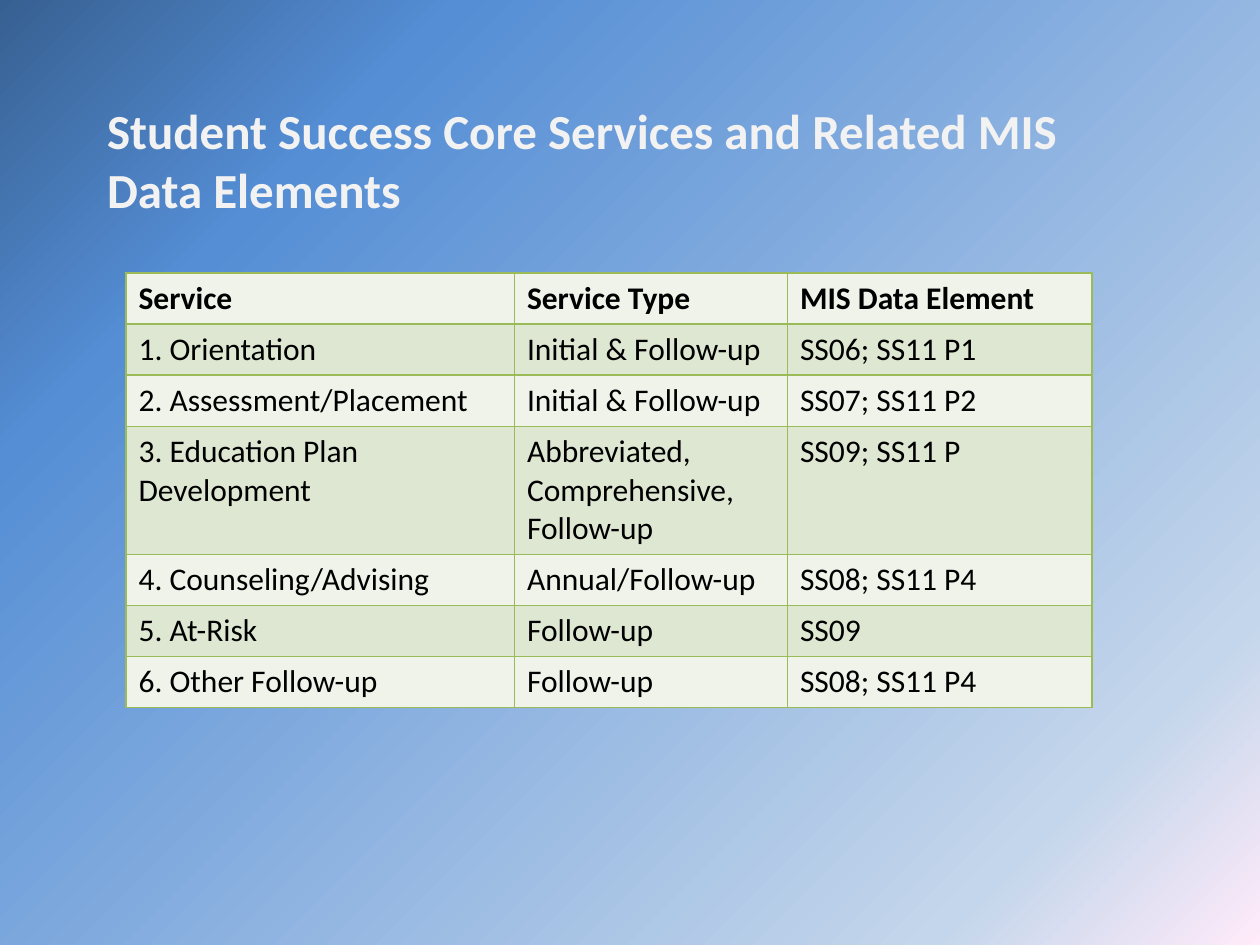
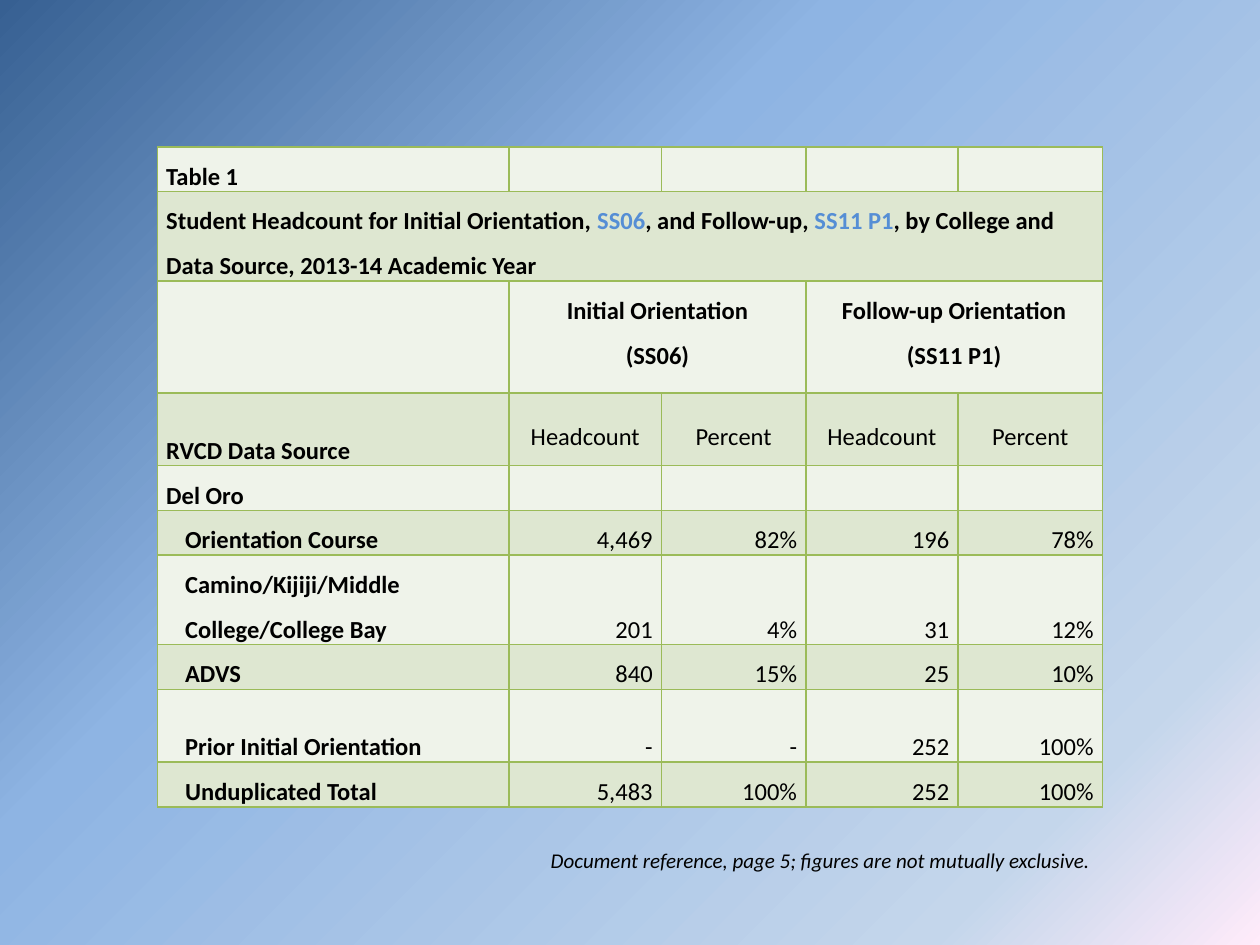
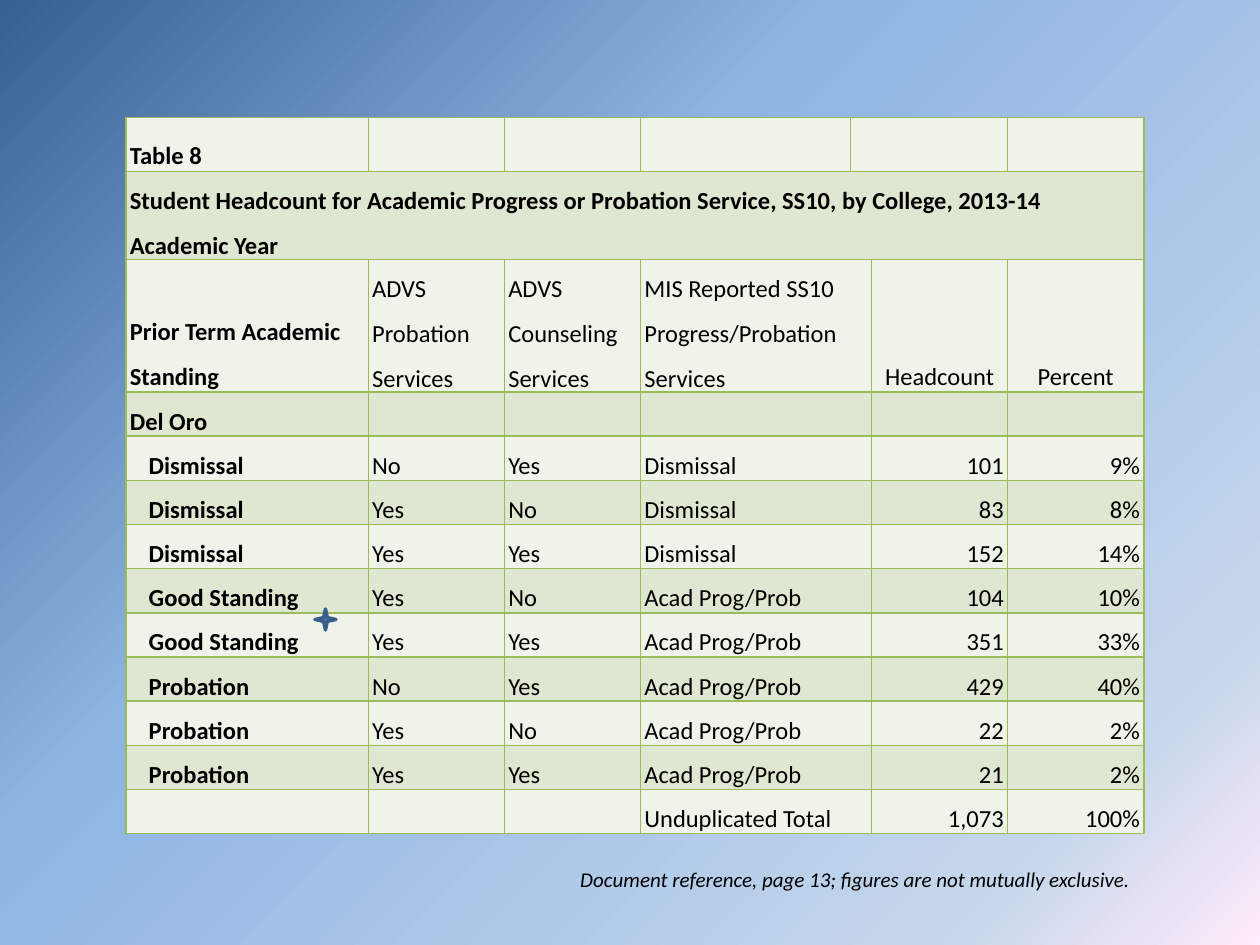
from dataclasses import dataclass

from lxml.etree import SubElement
from pptx import Presentation
from pptx.dml.color import RGBColor
from pptx.enum.shapes import MSO_SHAPE as Preset
from pptx.enum.text import MSO_ANCHOR as Anchor, PP_ALIGN as Align
from pptx.oxml.ns import qn
from pptx.util import Pt


@dataclass(frozen=True)
class Theme:
    font: str = "Calibri"
    title: str = "F2F2F2"
    text: str = "000000"
    code: str = "558ED5"
    border: str = "9BBB59"
    bands: tuple = ("EFF3EA", "DEE7D1")
    star: str = "4F81BD"
    star_line: str = "3A5F8C"
    title_size: int = 28
    overview_size: int = 18
    report_size: int = 14
    note_size: int = 12
    indent: float = 10.8


THEME = Theme()
TITLE_ONLY, BLANK = 5, 6

OVERVIEW_SKY = [(0, "376092"), (21, "558ED5"), (85, "C4D6EB"), (100, "FFEBFA")]
REPORT_SKY = [(0, "376092"), (38, "8EB4E3"), (85, "C4D6EB"), (100, "FFEBFA")]

TITLE = "Student Success Core Services and Related MIS Data Elements"

# Rows are (kind, cells). None continues the cell on its left, a line break
# starts a paragraph, and text between bars is a highlighted data code.
SERVICES = dict(
    at=(72, 156),
    widths=[222, 156, 174],
    heights=[29.2] * 3 + [72] + [29.2] * 3,
    size=THEME.overview_size,
    margins=(7.2, 3.6),
    spacing=1.0,
    anchor=Anchor.TOP,
    numeric=(),
    rows=[
        ("title", ["Service", "Service Type", "MIS Data Element"]),
        ("plain", ["1. Orientation", "Initial & Follow-up", "SS06; SS11 P1"]),
        ("plain", ["2. Assessment/Placement", "Initial & Follow-up", "SS07; SS11 P2"]),
        ("plain", ["3. Education Plan Development",
                   "Abbreviated, Comprehensive,\nFollow-up", "SS09; SS11 P"]),
        ("plain", ["4. Counseling/Advising", "Annual/Follow-up", "SS08; SS11 P4"]),
        ("plain", ["5. At-Risk", "Follow-up", "SS09"]),
        ("plain", ["6. Other Follow-up", "Follow-up", "SS08; SS11 P4"]),
    ],
)

ORIENTATION = dict(
    at=(90, 84),
    widths=[201, 87, 82.5, 87, 82.5],
    heights=[25, 51, 64, 41.5, 25, 25, 51, 25, 41.5, 25],
    size=THEME.report_size,
    margins=(5, 0),
    spacing=1.5,
    anchor=Anchor.BOTTOM,
    numeric=(1, 2, 3, 4),
    column_anchor=Anchor.MIDDLE,
    rows=[
        ("title", ["Table 1", "", "", "", ""]),
        ("title", ["Student Headcount for Initial Orientation, |SS06|, and Follow-up, "
                   "|SS11 P1|, by College and Data Source, 2013-14 Academic Year",
                   None, None, None, None]),
        ("band", ["", "Initial Orientation\n(SS06)", None,
                  "Follow-up Orientation (SS11 P1)", None]),
        ("columns", ["RVCD Data Source", "Headcount", "Percent", "Headcount", "Percent"]),
        ("group", ["Del Oro", "", "", "", ""]),
        ("data", ["Orientation Course", "4,469", "82%", "196", "78%"]),
        ("data", ["Camino/Kijiji/Middle\nCollege/College Bay", "201", "4%", "31", "12%"]),
        ("data", ["ADVS", "840", "15%", "25", "10%"]),
        ("data", ["Prior Initial Orientation", "-", "-", "252", "100%"]),
        ("data", ["Unduplicated Total", "5,483", "100%", "252", "100%"]),
    ],
)

PROBATION = dict(
    at=(72, 67),
    widths=[138.5, 77.8, 77.8, 120, 12, 77.8, 77.8],
    heights=[31, 50, 75] + [25] * 10,
    size=THEME.report_size,
    margins=(2.2, 0),
    spacing=1.5,
    anchor=Anchor.BOTTOM,
    numeric=(5, 6),
    column_anchor=Anchor.BOTTOM,
    rows=[
        ("title", ["Table 8", "", "", "", "", None, ""]),
        ("title", ["Student Headcount for Academic Progress or Probation Service, SS10, "
                   "by College, 2013-14 Academic Year", None, None, None, None, None, None]),
        ("columns", ["Prior Term Academic Standing", "ADVS Probation Services",
                     "ADVS Counseling Services",
                     "MIS Reported SS10 Progress/Probation Services", None,
                     "Headcount", "Percent"]),
        ("group", ["Del Oro", "", "", "", None, "", ""]),
        ("data", ["Dismissal", "No", "Yes", "Dismissal", None, "101", "9%"]),
        ("data", ["Dismissal", "Yes", "No", "Dismissal", None, "83", "8%"]),
        ("data", ["Dismissal", "Yes", "Yes", "Dismissal", None, "152", "14%"]),
        ("data", ["Good Standing", "Yes", "No", "Acad Prog/Prob", None, "104", "10%"]),
        ("data", ["Good Standing", "Yes", "Yes", "Acad Prog/Prob", None, "351", "33%"]),
        ("data", ["Probation", "No", "Yes", "Acad Prog/Prob", None, "429", "40%"]),
        ("data", ["Probation", "Yes", "No", "Acad Prog/Prob", None, "22", "2%"]),
        ("data", ["Probation", "Yes", "Yes", "Acad Prog/Prob", None, "21", "2%"]),
        ("data", ["", "", "", "Unduplicated Total", None, "1,073", "100%"]),
    ],
)

REPORTS = [
    (ORIENTATION, "Document reference, page 5; figures are not mutually exclusive.",
     (114, 481, 516, 21.6)),
    (PROBATION, "Document reference, page 13; figures are not mutually exclusive.",
     (276.5, 491.8, 376.5, 21.6)),
]
STAR_BOX = (180, 348, 12, 12)


def points(values):
    return [Pt(value) for value in values]


def style(run, size, color, bold=False, italic=False):
    font = run.font
    font.name, font.size, font.bold, font.italic = THEME.font, Pt(size), bold, italic
    font.color.rgb = RGBColor.from_string(color)


def new_slide(deck, layout, sky):
    slide = deck.slides.add_slide(deck.slide_layouts[layout])
    fill = slide.background.fill
    fill.gradient()
    fill.gradient_angle = 315
    stops = slide.element.find(".//" + qn("a:gsLst"))
    stops.clear()
    for percent, color in sky:
        stop = SubElement(stops, qn("a:gs"), pos=str(percent * 1000))
        SubElement(stop, qn("a:srgbClr"), val=color)
    return slide


def outline(cell):
    """Draw a one point border on all four sides."""
    properties = cell._tc.get_or_add_tcPr()
    for place, side in enumerate(("lnL", "lnR", "lnT", "lnB")):
        line = SubElement(properties, qn(f"a:{side}"), w=str(Pt(1)))
        SubElement(SubElement(line, qn("a:solidFill")), qn("a:srgbClr"), val=THEME.border)
        properties.insert(place, line)


def cell_layout(spec, kind, column):
    """Return the alignment and anchor that suit a cell's role."""
    if kind == "band":
        return Align.CENTER, Anchor.TOP
    if column in spec["numeric"]:
        if kind == "columns":
            return Align.CENTER, spec["column_anchor"]
        return Align.RIGHT, spec["anchor"]
    return Align.LEFT, spec["anchor"]


def write_cell(cell, text, spec, kind, column):
    alignment, cell.vertical_anchor = cell_layout(spec, kind, column)
    if not text:
        return
    bold = kind in ("title", "band") or (column == 0 and kind != "plain")
    frame = cell.text_frame
    for index, line in enumerate(text.split("\n")):
        paragraph = frame.add_paragraph() if index else frame.paragraphs[0]
        paragraph.alignment = alignment
        paragraph.line_spacing = spec["spacing"]
        if kind == "data" and column == 0:
            paragraph._p.get_or_add_pPr().set("indent", "0")
            paragraph._p.get_or_add_pPr().set("marL", str(Pt(THEME.indent)))
        for order, piece in enumerate(line.split("|")):
            run = paragraph.add_run()
            run.text = piece
            style(run, spec["size"], THEME.code if order % 2 else THEME.text, bold)


def add_grid(slide, spec):
    widths, heights = points(spec["widths"]), points(spec["heights"])
    table = slide.shapes.add_table(len(heights), len(widths), *points(spec["at"]),
                                   sum(widths), sum(heights)).table
    table.first_row = table.horz_banding = False
    for column, width in zip(table.columns, widths):
        column.width = width
    side, edge = points(spec["margins"])
    for r, (kind, texts) in enumerate(spec["rows"]):
        table.rows[r].height = heights[r]
        for c, text in enumerate(texts):
            cell = table.cell(r, c)
            cell.margin_left = cell.margin_right = side
            cell.margin_top = cell.margin_bottom = edge
            cell.fill.solid()
            cell.fill.fore_color.rgb = RGBColor.from_string(THEME.bands[r % 2])
            outline(cell)
            write_cell(cell, text, spec, kind, c)
        starts = [c for c, text in enumerate(texts) if text is not None]
        for start, end in zip(starts, starts[1:] + [len(texts)]):
            if end - start > 1:
                table.cell(r, start).merge(table.cell(r, end - 1))


def add_title(slide, text):
    title = slide.shapes.title
    title.left, title.top, title.width, title.height = points((54, 54, 612, 75))
    title.text_frame.text = text
    title.text_frame.vertical_anchor = Anchor.TOP
    paragraph = title.text_frame.paragraphs[0]
    paragraph.alignment = Align.LEFT
    style(paragraph.runs[0], THEME.title_size, THEME.title, bold=True)


def add_note(slide, text, box):
    frame = slide.shapes.add_textbox(*points(box)).text_frame
    frame.word_wrap = True
    frame.text = text
    paragraph = frame.paragraphs[0]
    paragraph.alignment = Align.RIGHT
    style(paragraph.runs[0], THEME.note_size, THEME.text, italic=True)


def add_star(slide):
    star = slide.shapes.add_shape(Preset.STAR_4_POINT, *points(STAR_BOX))
    star.shadow.inherit = False
    star.fill.solid()
    star.fill.fore_color.rgb = RGBColor.from_string(THEME.star)
    star.line.color.rgb = RGBColor.from_string(THEME.star_line)
    star.line.width = Pt(2)


def main():
    deck = Presentation()
    deck.slide_width, deck.slide_height = Pt(720), Pt(540)
    overview = new_slide(deck, TITLE_ONLY, OVERVIEW_SKY)
    add_title(overview, TITLE)
    add_grid(overview, SERVICES)
    for spec, note, note_box in REPORTS:
        report = new_slide(deck, BLANK, REPORT_SKY)
        add_grid(report, spec)
        add_note(report, note, note_box)
    add_star(report)
    deck.save("out.pptx")


if __name__ == "__main__":
    main()
